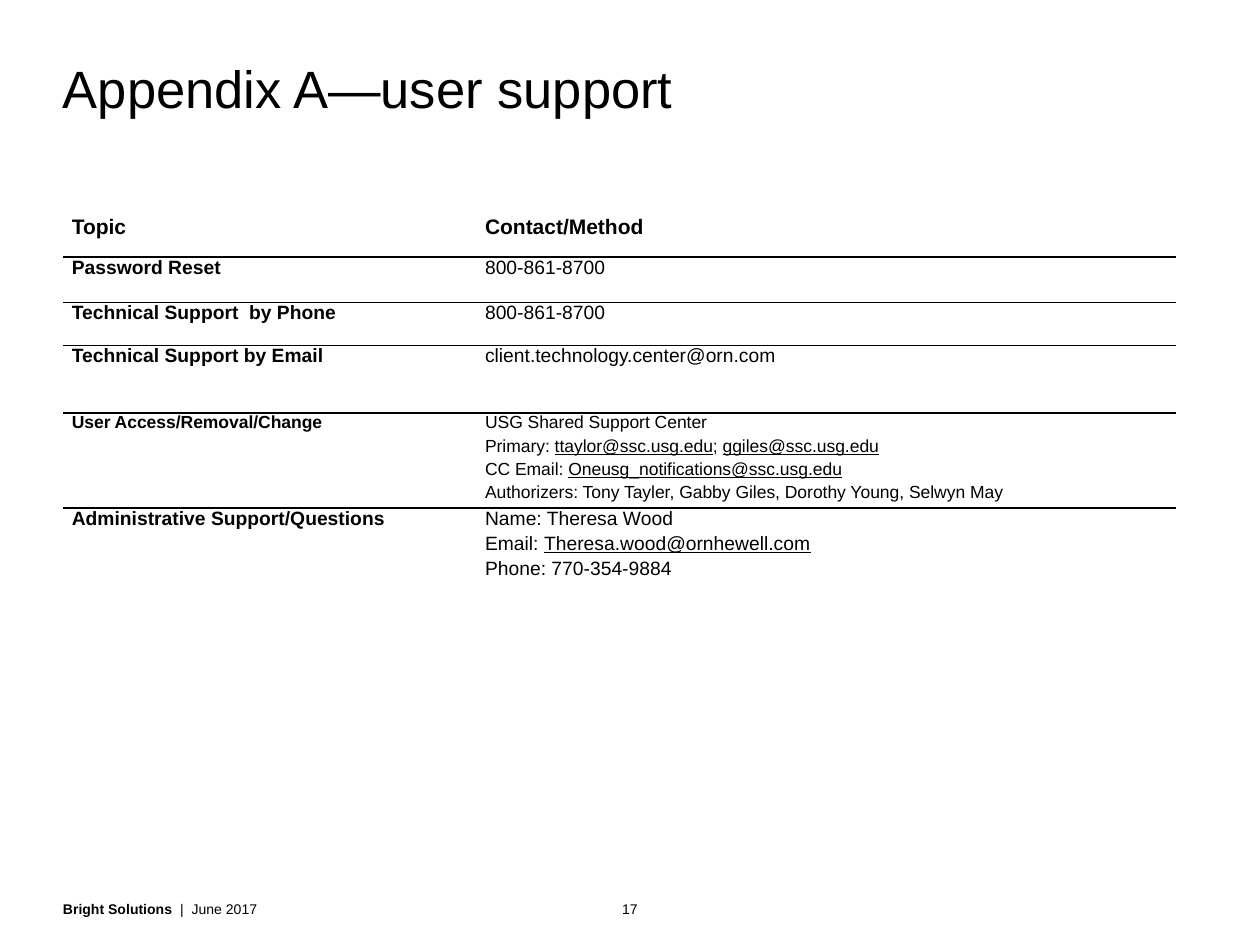
import pptx
import pptx.util
import pptx.dml.color
import pptx.enum.text
import pptx.oxml
import pptx.oxml.ns
from pptx.util import Inches

COLORS = {"text": "000000", "line": "000000", "background": "FFFFFF"}
FONT = "Arial"
COLUMN_WIDTHS = [3.28, 5.55]

# Row height, text size, width of the line below (0 for none), topic,
# contact paragraphs as lists of (text, format) runs
PLAIN = {"bold": False}
LINKED = {"bold": False, "underline": True}
ROWS = [
    (0.33, 12, 1, "Topic", [[("Contact/Method", {"bold": True})]]),
    (0.36, 11, 0.5, "Password Reset", [[("800‑861‑8700", PLAIN)]]),
    (0.34, 11, 0.5, "Technical Support  by Phone", [[("800‑861‑8700", PLAIN)]]),
    (0.54, 11, 1, "Technical Support by Email",
     [[("client.technology.center@orn.com", PLAIN)]]),
    (0.58, 10, 1, "User Access/Removal/Change", [
        [("USG Shared Support Center", PLAIN)],
        [("Primary: ", PLAIN), ("ttaylor@ssc.usg.edu", LINKED),
         ("; ", PLAIN), ("ggiles@ssc.usg.edu", LINKED)],
        [("CC Email: ", PLAIN), ("Oneusg_notifications@ssc.usg.edu", LINKED)],
        [("Authorizers: Tony Tayler, Gabby Giles, Dorothy Young, Selwyn May", PLAIN)],
    ]),
    (0.57, 11, 0, "Administrative Support/Questions", [
        [("Name: Theresa Wood", PLAIN)],
        [("Email: ", PLAIN), ("Theresa.wood@ornhewell.com", LINKED)],
        [("Phone: 770-354-9884", PLAIN)],
    ]),
]


def set_attributes(target, values):
    for name, value in values.items():
        setattr(target, name, value)


def write_paragraphs(text_frame, paragraphs, size, space_before=0, **layout):
    for index, runs in enumerate(paragraphs):
        paragraph = text_frame.add_paragraph() if index else text_frame.paragraphs[0]
        set_attributes(paragraph, layout)
        if index:
            paragraph.space_before = pptx.util.Pt(space_before)
        for text, values in runs:
            run = paragraph.add_run()
            run.text = text
            set_attributes(run.font, {"name": FONT, "size": pptx.util.Pt(size), **values})
            run.font.color.rgb = pptx.dml.color.RGBColor.from_string(COLORS["text"])


def add_text(slide, box, runs, size, anchor, **layout):
    shape = slide.shapes.add_textbox(*map(Inches, box))
    set_attributes(shape.text_frame, {
        "word_wrap": True, "vertical_anchor": anchor,
        "margin_left": 0, "margin_right": 0, "margin_top": 0, "margin_bottom": 0,
    })
    write_paragraphs(shape.text_frame, [runs], size, **layout)


def set_borders(cell, widths):
    properties = cell._tc.get_or_add_tcPr()
    for index, side in enumerate("LRTB"):
        width = widths.get(side, 0)
        fill = (f'<a:solidFill><a:srgbClr val="{COLORS["line"]}"/></a:solidFill>'
                if width else "<a:noFill/>")
        properties.insert(index, pptx.oxml.parse_xml(
            f'<a:ln{side} {pptx.oxml.ns.nsdecls("a")} '
            f'w="{int(pptx.util.Pt(width))}">{fill}</a:ln{side}>'))


def add_contact_table(slide):
    height = sum(row[0] for row in ROWS)
    table = slide.shapes.add_table(
        len(ROWS), len(COLUMN_WIDTHS), Inches(0.5), Inches(1.71),
        Inches(sum(COLUMN_WIDTHS)), Inches(height)).table
    set_attributes(table, {"first_row": False, "horz_banding": False})
    for column, width in zip(table.columns, COLUMN_WIDTHS):
        column.width = Inches(width)

    line_above = 0
    for row, (height, size, line_below, topic, contact) in zip(table.rows, ROWS):
        row.height = Inches(height)
        topic_paragraphs = [[(topic, {"bold": True})]]
        for cell, paragraphs in zip(row.cells, (topic_paragraphs, contact)):
            set_attributes(cell, {
                "margin_left": Inches(0.07), "margin_right": Inches(0.07),
                "margin_top": 0, "margin_bottom": 0,
            })
            cell.fill.background()
            set_borders(cell, {"T": line_above, "B": line_below})
            write_paragraphs(cell.text_frame, paragraphs, size, space_before=2)
        line_above = line_below


def main():
    presentation = pptx.Presentation()
    set_attributes(presentation, {"slide_width": Inches(10), "slide_height": Inches(7.5)})
    slide = presentation.slides.add_slide(presentation.slide_layouts[6])
    slide.background.fill.solid()
    slide.background.fill.fore_color.rgb = pptx.dml.color.RGBColor.from_string(
        COLORS["background"])
    anchors = pptx.enum.text.MSO_ANCHOR

    # Footer and page number
    add_text(slide, (0.5, 7.15, 8.16, 0.13),
             [("Bright Solutions  ", {"bold": True}), ("|  June 2017", PLAIN)],
             8, anchors.BOTTOM)
    add_text(slide, (4.74, 7.15, 0.52, 0.13), [("17", PLAIN)], 8, anchors.BOTTOM,
             alignment=pptx.enum.text.PP_ALIGN.CENTER)

    # Title
    add_text(slide, (0.5, 0.5, 9, 0.99), [("Appendix A—user support", PLAIN)],
             30, anchors.TOP, line_spacing=pptx.util.Pt(32))

    # Support contacts
    add_contact_table(slide)
    presentation.save("out.pptx")


if __name__ == "__main__":
    main()
